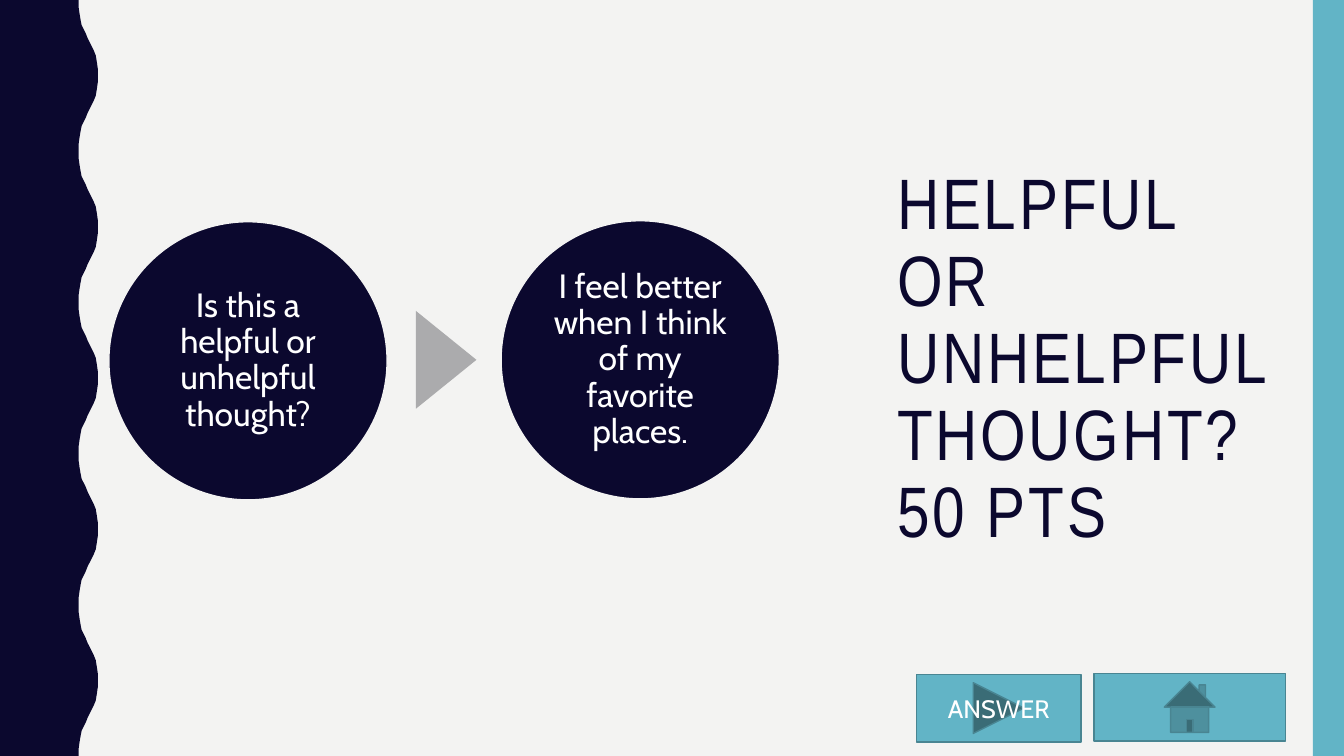
from dataclasses import dataclass

from pptx import Presentation, util as u
from pptx.dml.color import RGBColor
from pptx.enum import shapes, text

PX = u.Inches(1) // 100
WIDTH, HEIGHT = 1333, 750
WAVE_PERIOD = 150
# Edge of the wave from a trough to the next crest
WAVE_RISE = [(78, 0), (78, 7), (79, 14), (80, 20), (81, 25), (83, 29), (85, 33), (87, 38),
             (89, 42), (91, 46), (93, 50), (95, 55), (96, 61), (97, 68), (97, 75)]


@dataclass(frozen=True)
class Theme:
    paper: str = "F3F3F2"
    navy: str = "0B082E"
    teal: str = "62B4C6"
    teal_edge: str = "498592"
    gray: str = "ABABAD"
    white: str = "FFFFFF"
    title_font: str = "Arial Narrow"
    body_font: str = "Cabin"
    title_size: int = 51
    body_size: int = 24
    button_size: int = 18


THEME = Theme()


def paint(shape, fill, line=None):
    shape.shadow.inherit = False
    shape.fill.solid()
    shape.fill.fore_color.rgb = RGBColor.from_string(fill)
    if line:
        shape.line.color.rgb = RGBColor.from_string(line)
        shape.line.width = u.Pt(1)
    else:
        shape.line.fill.background()


def add_shape(slide, kind, box, fill, line=None):
    shape = slide.shapes.add_shape(kind, *(value * PX for value in box))
    paint(shape, fill, line)
    return shape


def write(shape, words, size, color, font=THEME.body_font, align=text.PP_ALIGN.CENTER,
          line_spacing=None):
    frame = shape.text_frame
    frame.word_wrap = True
    frame.vertical_anchor = text.MSO_ANCHOR.MIDDLE
    paragraph = frame.paragraphs[0]
    paragraph.text = words
    paragraph.alignment = align
    paragraph.line_spacing = line_spacing
    paragraph.font.name = font
    paragraph.font.size = u.Pt(size)
    paragraph.font.color.rgb = RGBColor.from_string(color)
    return paragraph


def add_wave(slide):
    cycle = WAVE_RISE + [(x, WAVE_PERIOD - y) for x, y in WAVE_RISE[-2::-1]]
    edge = [(x, y + top) for top in range(0, HEIGHT, WAVE_PERIOD) for x, y in cycle]
    builder = slide.shapes.build_freeform(0, 0, scale=PX)
    builder.add_line_segments(edge + [(0, HEIGHT)], close=True)
    paint(builder.convert_to_shape(), THEME.navy)


def add_title(slide, words):
    box = slide.shapes.add_textbox(880 * PX, 53 * PX, 400 * PX, 609 * PX)
    paragraph = write(box, words, THEME.title_size, THEME.navy, THEME.title_font,
                      text.PP_ALIGN.LEFT, 0.9)
    for run in paragraph.runs:
        run.font._element.set("spc", "200")


def add_circle(slide, left, top, words):
    circle = add_shape(slide, shapes.MSO_SHAPE.OVAL, (left, top, 276, 276),
                       THEME.navy, THEME.paper)
    frame = circle.text_frame
    frame.margin_left = frame.margin_right = frame.margin_top = frame.margin_bottom = 3 * PX
    write(circle, words, THEME.body_size, THEME.white, line_spacing=0.9)


def add_button(slide, kind, box):
    return add_shape(slide, kind, box, THEME.teal, THEME.teal_edge)


def main():
    presentation = Presentation()
    presentation.slide_width, presentation.slide_height = WIDTH * PX, HEIGHT * PX
    slide = presentation.slides.add_slide(presentation.slide_layouts[6])
    slide.background.fill.solid()
    slide.background.fill.fore_color.rgb = RGBColor.from_string(THEME.paper)

    add_wave(slide)
    add_shape(slide, shapes.MSO_SHAPE.RECTANGLE, (1302, 0, 31, HEIGHT), THEME.teal)
    add_title(slide, "HELPFUL OR UNHELPFUL THOUGHT?\v50 PTS")

    add_circle(slide, 108, 220, "Is this a helpful or unhelpful thought?")
    arrow = add_shape(slide, shapes.MSO_SHAPE.ISOSCELES_TRIANGLE, (394, 327, 97, 60), THEME.gray)
    arrow.rotation = 90
    add_circle(slide, 497, 219, "I feel better when I think of my favorite places.")

    add_button(slide, shapes.MSO_SHAPE.ACTION_BUTTON_HOME, (1085, 668, 190, 67))
    answer = add_button(slide, shapes.MSO_SHAPE.ACTION_BUTTON_FORWARD_OR_NEXT,
                        (909, 669, 163, 67))
    write(answer, "ANSWER", THEME.button_size, THEME.white)

    presentation.save("out.pptx")


if __name__ == "__main__":
    main()
